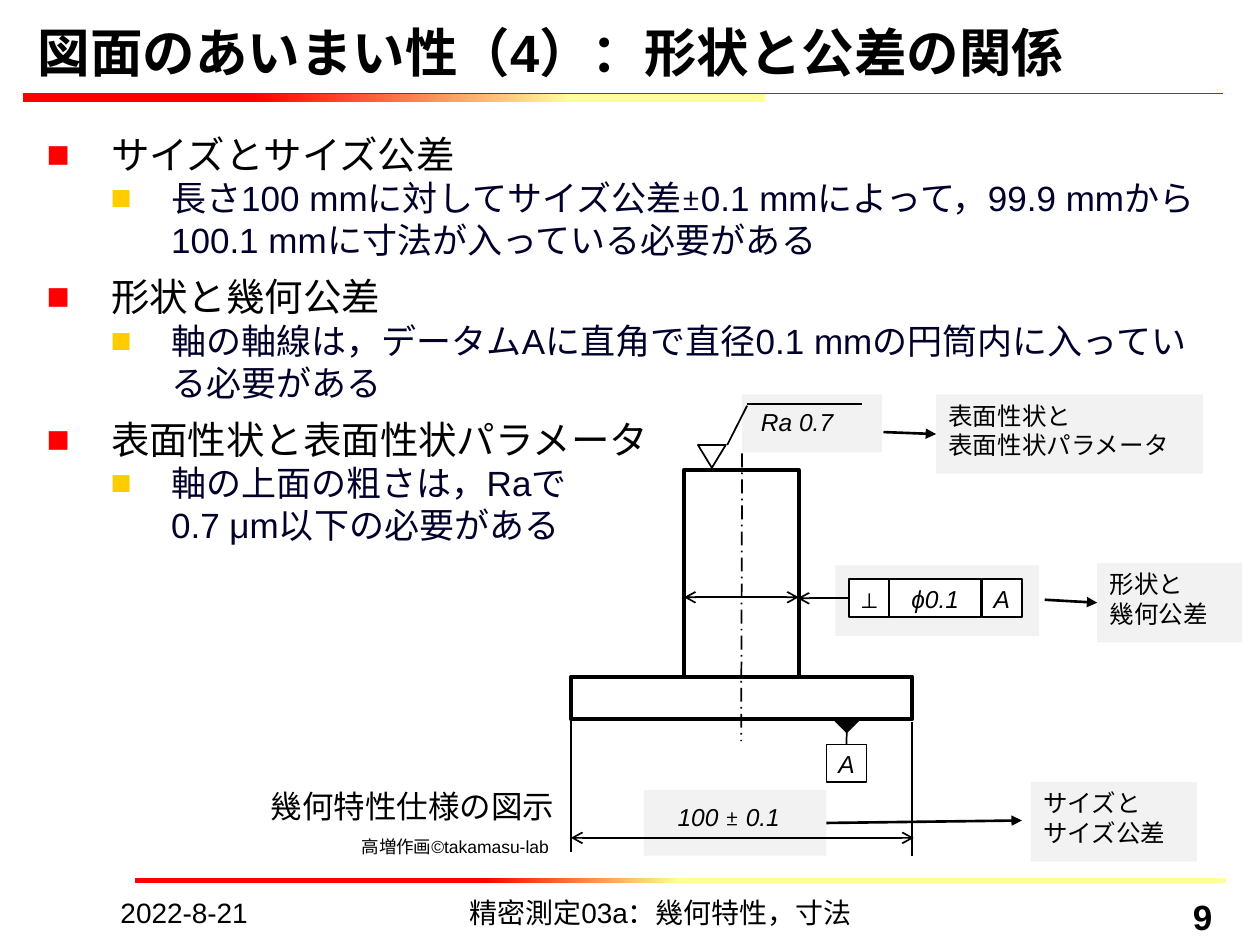
from lxml import etree
from pptx import Presentation
from pptx.dml.color import RGBColor
from pptx.enum.dml import MSO_LINE
from pptx.enum.shapes import MSO_CONNECTOR, MSO_SHAPE
from pptx.enum.text import MSO_ANCHOR, PP_ALIGN
from pptx.oxml.ns import qn
from pptx.util import Cm, Pt

STRAIGHT = MSO_CONNECTOR.STRAIGHT
RECTANGLE, TRIANGLE = MSO_SHAPE.RECTANGLE, MSO_SHAPE.ISOSCELES_TRIANGLE
LEFT, CENTER, RIGHT = PP_ALIGN.LEFT, PP_ALIGN.CENTER, PP_ALIGN.RIGHT
TOP, MIDDLE, BOTTOM = MSO_ANCHOR.TOP, MSO_ANCHOR.MIDDLE, MSO_ANCHOR.BOTTOM
DASH_DOT = MSO_LINE.LONG_DASH_DOT
SIDE_TOP, SIDE_LEFT, SIDE_RIGHT = 0, 1, 3

COLORS = {
    "black": "000000", "white": "FFFFFF", "navy": "00002A", "grey": "F2F2F2",
    "red": "FF0000", "gold": "FFCC00", "yellow": "FFFF99",
}
TOPICS = [
    (["サイズとサイズ公差"],
     ["長さ100 mmに対してサイズ公差", "±",
      "0.1 mmによって，99.9 mmから100.1 mmに寸法が入っている必要がある"]),
    (["形状と幾何公差"],
     ["軸の軸線は，データムAに直角で直径0.1 mmの円筒内に入っている必要がある"]),
    (["表面性状と表面性状パラメータ"],
     ["軸の上面の粗さは，Raで", "\n", "0.7 μm以下の必要がある"]),
]


def color(name):
    return RGBColor.from_string(COLORS[name])


def add_spans(para, texts, size, ink="black", bold=False, italic=False):
    """Add one run per text; a newline becomes a line break, ± is upright Cambria."""
    for text in texts:
        if text == "\n":
            para.add_line_break()
            continue
        span = para.add_run()
        span.text = text
        span.font.name = "Cambria" if text == "±" else "Arial"
        span.font.size = Pt(size)
        span.font.bold = bold
        span.font.italic = italic and text != "±"
        span.font.color.rgb = color(ink)


def write(box, lines, size, align=LEFT, anchor=TOP, inset=None, wrap=True, **style):
    """Fill a box with paragraphs, each given as a list of run texts."""
    frame = box.text_frame
    frame.word_wrap = wrap
    frame.vertical_anchor = anchor
    if inset is not None:
        frame.margin_left = frame.margin_right = Cm(inset)
        frame.margin_top = frame.margin_bottom = Cm(inset)
    for index, texts in enumerate(lines):
        para = frame.add_paragraph() if index else frame.paragraphs[0]
        para.alignment = align
        add_spans(para, texts, size, **style)


def add_label(shapes, place, texts, size, **options):
    box = shapes.add_textbox(*map(Cm, place))
    write(box, [texts], size, **options)
    return box


def add_block(shapes, place, fill=None, line=None, kind=RECTANGLE):
    block = shapes.add_shape(kind, *map(Cm, place))
    block.shadow.inherit = False
    if fill:
        block.fill.solid()
        block.fill.fore_color.rgb = color(fill)
    else:
        block.fill.background()
    if line:
        block.line.color.rgb = color("black")
        block.line.width = Pt(line)
    else:
        block.line.fill.background()
    return block


def add_gradient_bar(shapes, place, yellow_end, red_start):
    bar = add_block(shapes, place)
    bar.fill.gradient()
    bar.fill.gradient_angle = 180
    stops = [(yellow_end, "yellow"), (red_start, "red")]
    for stop, (position, name) in zip(bar.fill.gradient_stops, stops):
        stop.position = position
        stop.color.rgb = color(name)


def add_line(shapes, ends, width=1, ink="black", dash=None, head=None, tail=None,
             begin=None, end=None):
    """Draw a line; begin and end are optional (shape, side) joints."""
    line = shapes.add_connector(STRAIGHT, *map(Cm, ends))
    etree.SubElement(line._element.spPr, qn("a:effectLst"))
    line.line.color.rgb = color(ink)
    line.line.width = Pt(width)
    if dash:
        line.line.dash_style = dash
    outline = line.line._get_or_add_ln()
    for tag, arrow in (("a:headEnd", head), ("a:tailEnd", tail)):
        if arrow:
            etree.SubElement(outline, qn(tag), type=arrow)
    if begin:
        line.begin_connect(*begin)
    if end:
        line.end_connect(*end)


def set_bullet(para, ink, left, hanging):
    props = para._p.get_or_add_pPr()
    props.set("marL", str(Cm(left)))
    props.set("indent", str(-Cm(hanging)))
    bullet_color = etree.SubElement(props, qn("a:buClr"))
    etree.SubElement(bullet_color, qn("a:srgbClr"), val=COLORS[ink])
    etree.SubElement(props, qn("a:buFont"), typeface="Arial")
    etree.SubElement(props, qn("a:buChar"), char="■")


def add_topics(shapes):
    box = shapes.add_textbox(Cm(0.69), Cm(2.51), Cm(24), Cm(15))
    frame = box.text_frame
    frame.word_wrap = True
    for index, (heading, detail) in enumerate(TOPICS):
        para = frame.add_paragraph() if index else frame.paragraphs[0]
        if index:
            para.space_before = Pt(7)
        set_bullet(para, "red", 1.3, 1.3)
        add_spans(para, heading, 22)
        para = frame.add_paragraph()
        para.level = 1
        set_bullet(para, "gold", 2.51, 1.22)
        add_spans(para, detail, 20, ink="navy")


def add_frame_cell(shapes, left, top, width, text, anchor=MIDDLE, **style):
    cell = add_block(shapes, (left, top, width, 0.76), "white", 1)
    write(cell, [[text]], 14, CENTER, anchor, inset=0.1, **style)
    return cell


def add_callout(shapes, place, lines):
    callout = add_block(shapes, place, "grey")
    write(callout, [[text] for text in lines], 14)
    return callout


def add_part(shapes):
    """Draw the part with its dimensions, tolerance frame and datum."""
    add_block(shapes, (14.96, 7.95, 2.82, 1.17), "grey")
    add_block(shapes, (16.84, 11.4, 4.11, 1.42), "grey")
    size_area = add_block(shapes, (12.98, 15.93, 3.68, 1.32), "grey")
    add_block(shapes, (13.79, 9.47, 2.31, 4.22), "white", 2.25)
    add_block(shapes, (11.51, 13.64, 6.88, 0.86), "white", 2.25)
    add_line(shapes, (14.96, 9.14, 14.94, 14.94), dash=DASH_DOT)
    add_line(shapes, (13.79, 12.04, 16.1, 12.04), head="arrow", tail="arrow")

    symbol = add_frame_cell(shapes, 17.12, 11.68, 0.81, "⊥", TOP, bold=True)
    add_frame_cell(shapes, 17.93, 11.68, 1.85, "ϕ0.1", italic=True)
    add_frame_cell(shapes, 19.79, 11.68, 0.81, "A", italic=True)
    add_line(shapes, (16.08, 12.06, 17.12, 12.06), head="arrow",
             end=(symbol, SIDE_LEFT))

    add_block(shapes, (16.84, 14.53, 0.46, 0.23), "black", 1, TRIANGLE).rotation = 180
    datum = add_frame_cell(shapes, 16.66, 15.01, 0.81, "A", italic=True)
    add_line(shapes, (17.07, 15.01, 17.07, 14.6), begin=(datum, SIDE_TOP))

    add_line(shapes, (11.51, 14.53, 11.51, 17.17))
    add_line(shapes, (18.39, 14.55, 18.39, 17.25))
    add_label(shapes, (13.41, 16.05, 3.12, 0.94), ["100 ", "±", " 0.1"], 14, italic=True)
    add_line(shapes, (11.51, 16.89, 18.42, 16.89), head="arrow", tail="arrow")

    add_block(shapes, (14.07, 8.97, 0.56, 0.46), None, 1, TRIANGLE).rotation = 180
    add_line(shapes, (14.66, 8.97, 15.06, 8.18))
    add_line(shapes, (15.06, 8.15, 17.37, 8.15))
    add_label(shapes, (15.09, 8.08, 2.29, 0.94), ["Ra 0.7"], 14, italic=True)
    return size_area


def add_callouts(shapes, size_area):
    add_callout(shapes, (20.78, 15.77, 3.35, 1.6), ["サイズと", "サイズ公差"])
    form = add_callout(shapes, (22.12, 11.35, 2.92, 1.6), ["形状と", "幾何公差"])
    surface = add_callout(shapes, (18.87, 7.95, 5.38, 1.6),
                          ["表面性状と", "表面性状パラメータ"])
    arrow = {"width": 1.5, "tail": "triangle"}
    add_line(shapes, (16.66, 16.59, 20.6, 16.54), begin=(size_area, SIDE_RIGHT), **arrow)
    add_line(shapes, (21.06, 12.09, 22.12, 12.15), end=(form, SIDE_LEFT), **arrow)
    add_line(shapes, (17.81, 8.71, 18.87, 8.75), end=(surface, SIDE_LEFT), **arrow)


def main():
    deck = Presentation()
    deck.slide_width, deck.slide_height = Cm(25.4), Cm(19.05)
    page = deck.slides.add_slide(deck.slide_layouts[6])
    shapes = page.shapes

    add_gradient_bar(shapes, (2.72, 17.7, 22, 0.1), 0.5, 0.68)
    add_gradient_bar(shapes, (0.46, 1.88, 14.96, 0.18), 0.26, 0.69)
    add_line(shapes, (0.46, 1.88, 24.66, 1.88), 0.75, "red")
    add_topics(shapes)
    add_label(shapes, (0.51, 0.53, 24.21, 1.27),
              ["図面のあいまい性（4）：形状と公差の関係"], 30, anchor=BOTTOM, bold=True)

    add_label(shapes, (2.18, 17.93, 5.51, 0.74), ["2022-8-21"], 16)
    add_label(shapes, (6.71, 17.93, 13.21, 0.74),
              ["精密測定03a：幾何特性，寸法"], 16, align=CENTER)
    add_label(shapes, (20.5, 17.93, 4.19, 0.74), ["9"], 20, align=RIGHT, bold=True)

    add_label(shapes, (7.19, 16.76, 4.01, 0.64), ["高増作画©takamasu-lab"], 10, inset=0.1)
    drawing = shapes.add_group_shape().shapes
    size_area = add_part(drawing)
    add_callouts(drawing, size_area)
    add_label(shapes, (5.36, 15.77, 5.97, 0.97), ["幾何特性仕様の図示"], 18,
              inset=0.1, wrap=False)
    deck.save("out.pptx")


if __name__ == "__main__":
    main()
